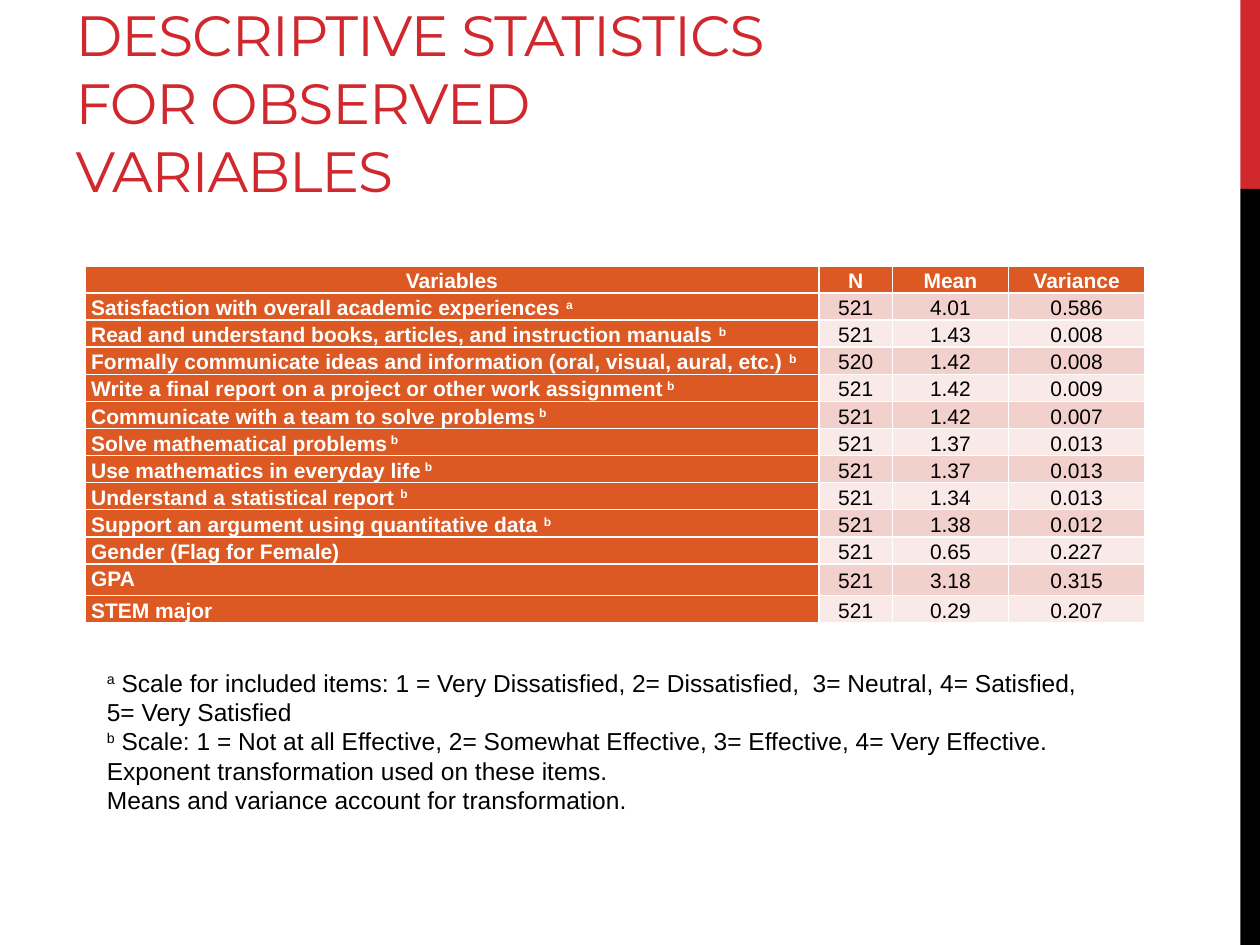
"""Build a slide with a table of descriptive statistics and its scale notes."""
from pptx import Presentation
from pptx.dml.color import RGBColor
from pptx.enum.shapes import MSO_SHAPE as Shape
from pptx.enum.text import MSO_ANCHOR as Anchor, MSO_AUTO_SIZE as AutoSize, PP_ALIGN as Align
from pptx.util import Pt

COLORS = {"red": "D1282E", "black": "000000", "white": "FFFFFF",
          "orange": "DC5924", "band_dark": "F2D1CD", "band_light": "F9EAE8"}


def rgb(name):
    return RGBColor.from_string(COLORS[name])


def write(paragraph, text, size=12, font="Arial", color="black", bold=False,
          align=Align.LEFT, line=1.0, tracking=0):
    """Write text in which ^ marks off superscript parts."""
    paragraph.alignment = align
    paragraph.line_spacing = line
    for number, part in enumerate(text.split("^")):
        if not part:
            continue
        run = paragraph.add_run()
        run.text = part
        run.font.size = Pt(size)
        run.font.name = font
        run.font.bold = bold
        run.font.color.rgb = rgb(color)
        properties = run._r.get_or_add_rPr()
        if number % 2:
            properties.set("baseline", "30000")
        if tracking:
            properties.set("spc", str(round(tracking * 100)))


deck = Presentation()
deck.slide_width, deck.slide_height = Pt(720), Pt(540)
slide = deck.slides.add_slide(deck.slide_layouts[5])

for top, height, color in [(0, 108, "red"), (108, 432, "black")]:
    side_bar = slide.shapes.add_shape(Shape.RECTANGLE, Pt(708.75), Pt(top), Pt(11.25), Pt(height))
    side_bar.shadow.inherit = False
    side_bar.fill.solid()
    side_bar.fill.fore_color.rgb = rgb(color)
    side_bar.line.fill.background()

heading = slide.shapes.title
heading.left, heading.top, heading.width, heading.height = Pt(36), Pt(12), Pt(456), Pt(108)
heading.text_frame.word_wrap = True
heading.text_frame.auto_size = AutoSize.NONE
heading.text_frame.vertical_anchor = Anchor.BOTTOM
write(heading.text_frame.paragraphs[0], "DESCRIPTIVE STATISTICS FOR OBSERVED VARIABLES",
      size=32.4, font="Montserrat", color="red", tracking=-0.6)

statistics = [
    ("Variables", "N", "Mean", "Variance"),
    ("Satisfaction with overall academic experiences ^a", "521", "4.01", "0.586"),
    ("Read and understand books, articles, and instruction manuals ^b", "521", "1.43", "0.008"),
    ("Formally communicate ideas and information (oral, visual, aural, etc.) ^b",
     "520", "1.42", "0.008"),
    ("Write a final report on a project or other work assignment^ b", "521", "1.42", "0.009"),
    ("Communicate with a team to solve problems^ b", "521", "1.42", "0.007"),
    ("Solve mathematical problems^ b", "521", "1.37", "0.013"),
    ("Use mathematics in everyday life^ b", "521", "1.37", "0.013"),
    ("Understand a statistical report ^b", "521", "1.34", "0.013"),
    ("Support an argument using quantitative data ^b", "521", "1.38", "0.012"),
    ("Gender (Flag for Female)", "521", "0.65", "0.227"),
    ("GPA", "521", "3.18", "0.315"),
    ("STEM major", "521", "0.29", "0.207"),
]
column_widths = [419.5, 42, 66.25, 78]
table = slide.shapes.add_table(len(statistics), len(column_widths), Pt(48.5), Pt(152),
                               Pt(sum(column_widths)), Pt(203)).table
table.first_col = True
for column, width in zip(table.columns, column_widths):
    column.width = Pt(width)

for row, values in enumerate(statistics):
    table.rows[row].height = Pt(18 if values[0] == "GPA" else 15.4)
    band = "band_dark" if row % 2 else "band_light"
    for col, value in enumerate(values):
        cell = table.cell(row, col)
        is_header, is_label = row == 0, col == 0
        strong = is_header or is_label
        cell.margin_left = cell.margin_right = Pt(3.6)
        cell.margin_top = cell.margin_bottom = 0
        cell.fill.solid()
        cell.fill.fore_color.rgb = rgb("orange" if strong else band)
        if is_header:
            cell.vertical_anchor = Anchor.BOTTOM
        else:
            cell.vertical_anchor = Anchor.TOP if is_label else Anchor.MIDDLE
        write(cell.text_frame.paragraphs[0], value, color="white" if strong else "black",
              bold=strong, line=1.15,
              align=Align.LEFT if is_label and not is_header else Align.CENTER)

scale_notes = [
    "^a^ Scale for included items: 1 = Very Dissatisfied, 2= Dissatisfied,  3= Neutral, "
    "4= Satisfied, 5= Very Satisfied",
    "^b^ Scale: 1 = Not at all Effective, 2= Somewhat Effective, 3= Effective, "
    "4= Very Effective. Exponent transformation used on these items.",
    "Means and variance account for transformation.",
]
notes_frame = slide.shapes.add_textbox(Pt(54), Pt(378), Pt(570), Pt(92)).text_frame
notes_frame.word_wrap = True
for number, note in enumerate(scale_notes):
    write(notes_frame.add_paragraph() if number else notes_frame.paragraphs[0], note, size=14)

deck.save("out.pptx")
